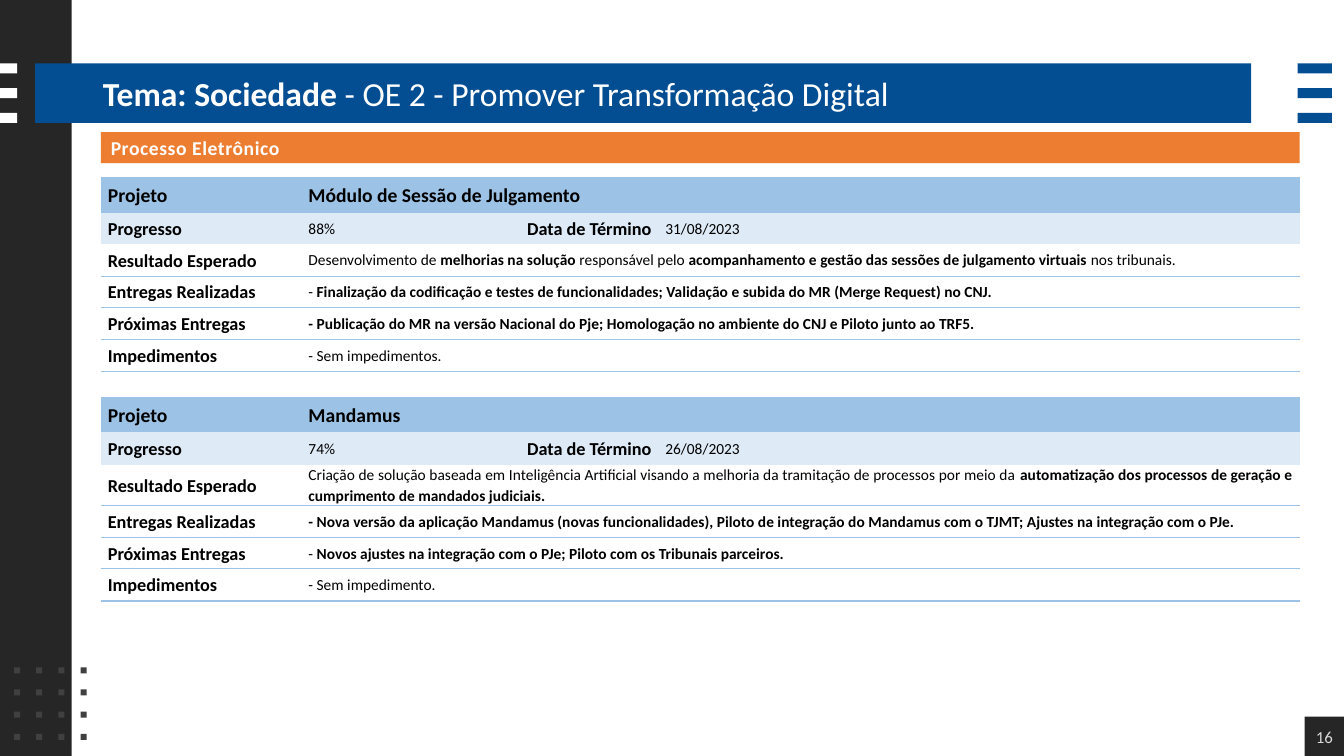
from itertools import product

from lxml import etree
from pptx import Presentation
from pptx.dml.color import RGBColor
from pptx.enum.shapes import MSO_SHAPE
from pptx.enum.text import MSO_ANCHOR, MSO_AUTO_SIZE, PP_ALIGN
from pptx.oxml.ns import qn
from pptx.util import Inches, Pt

BLUE = "034D92"
DARK = "262626"
WHITE = "FFFFFF"
BLACK = "000000"
HEADER = "9CC2E5"
PROGRESS = "DEEAF6"
NO_STYLE = "{2D5ABB26-0587-4C30-8999-92F81FD0307C}"

COLUMNS = (1.99, 1.77, 1.77, 6.36)
LABELS = ("Resultado Esperado", "Entregas Realizadas", "Próximas Entregas", "Impedimentos")

SESSION = {
    "name": "Módulo de Sessão de Julgamento",
    "progress": "88%",
    "end": "31/08/2023",
    "details": (
        "Desenvolvimento de *melhorias na solução* responsável pelo "
        "*acompanhamento e gestão das sessões de julgamento virtuais *nos tribunais.",
        "- *Finalização da codificação e testes de funcionalidades; "
        "Validação e subida do MR (Merge Request) no CNJ.",
        "*- Publicação do MR na versão Nacional do Pje; "
        "Homologação no ambiente do CNJ e Piloto junto ao TRF5.",
        "- Sem impedimentos.",
    ),
}
MANDAMUS = {
    "name": "Mandamus",
    "progress": "74%",
    "end": "26/08/2023",
    "details": (
        "Criação de solução baseada em Inteligência Artificial visando a melhoria "
        "da tramitação de processos por meio da *automatização dos processos de "
        "geração e cumprimento de mandados judiciais.",
        "*- Nova versão da aplicação Mandamus (novas funcionalidades), Piloto de "
        "integração do Mandamus com o TJMT; Ajustes na integração com o PJe.",
        "- *Novos ajustes na integração com o PJe; Piloto com os Tribunais parceiros.",
        "- Sem impedimento.",
    ),
}


def rgb(value):
    return RGBColor.from_string(value)


def apply(target, values):
    for name, value in values.items():
        setattr(target, name, value)


def write(paragraph, text, size, color, align=PP_ALIGN.LEFT):
    paragraph.alignment = align
    for index, part in enumerate(text.split("*")):
        if part:
            run = paragraph.add_run()
            run.text = part
            apply(run.font, {"name": "Calibri", "size": Pt(size), "bold": index % 2 == 1})
            run.font.color.rgb = rgb(color)


def add_block(slide, left, top, width, height, color):
    block = slide.shapes.add_shape(
        MSO_SHAPE.RECTANGLE, Inches(left), Inches(top), Inches(width), Inches(height))
    block.shadow.inherit = False
    block.fill.solid()
    block.fill.fore_color.rgb = rgb(color)
    block.line.fill.background()
    return block


def add_stripes(slide, left, width, color):
    for row in range(3):
        add_block(slide, left, 0.63 + row * 0.245, width, 0.1, color)


def add_decoration(slide):
    add_block(slide, 0, 0, 0.71, 7.5, DARK)
    add_block(slide, 0.35, 0.63, 12.06, 0.59, BLUE)
    add_stripes(slide, 0, 0.17, WHITE)
    add_stripes(slide, 12.87, 0.34, BLUE)
    for row, column in product(range(4), range(4)):
        add_block(slide, 0.14 + column * 0.22, 6.62 + row * 0.22, 0.06, 0.06, "404040")


def add_title(slide):
    title = slide.shapes.title
    apply(title, {"left": Inches(0.92), "top": Inches(0.64),
                  "width": Inches(11.5), "height": Inches(0.56)})
    apply(title.text_frame, {"vertical_anchor": MSO_ANCHOR.MIDDLE, "word_wrap": True,
                             "auto_size": MSO_AUTO_SIZE.NONE})
    write(title.text_frame.paragraphs[0],
          "*Tema: Sociedade *- OE 2 - Promover Transformação Digital", 24, WHITE)
    title.element.getparent().append(title.element)


def add_section(slide):
    section = add_block(slide, 1, 1.31, 11.89, 0.31, "ED7D31")
    section.text_frame.vertical_anchor = MSO_ANCHOR.MIDDLE
    heading = section.text_frame.paragraphs[0]
    write(heading, "*Processo Eletrônico", 14, WHITE)
    heading.runs[0]._r.get_or_add_rPr().set("spc", "40")


def add_page_number(slide):
    page = add_block(slide, 12.94, 7.11, 0.39, 0.39, DARK)
    apply(page.text_frame, {"margin_left": 0, "margin_right": 0, "margin_top": 0,
                            "margin_bottom": 0, "vertical_anchor": MSO_ANCHOR.MIDDLE})
    write(page.text_frame.paragraphs[0], "16", 12, "D9D9D9", PP_ALIGN.CENTER)


def fill_cell(cell, text, size, align=PP_ALIGN.LEFT):
    paragraph = cell.text_frame.paragraphs[0]
    write(paragraph, text, size, BLACK, align)
    paragraph.line_spacing = 1.07


def format_row(row, color):
    for cell in row.cells:
        apply(cell, {"margin_left": Inches(0.07), "margin_right": Inches(0.07),
                     "margin_top": 0, "margin_bottom": 0,
                     "vertical_anchor": MSO_ANCHOR.MIDDLE})
        if color:
            cell.fill.solid()
            cell.fill.fore_color.rgb = rgb(color)
        else:
            cell.fill.background()
            add_bottom_border(cell)


def add_bottom_border(cell):
    border = etree.Element(qn("a:lnB"), w=str(Pt(1)))
    fill = etree.SubElement(border, qn("a:solidFill"))
    etree.SubElement(fill, qn("a:srgbClr"), val=HEADER)
    cell._tc.get_or_add_tcPr().insert(0, border)


def add_project(slide, project, top, heights):
    frame = slide.shapes.add_table(
        len(heights), len(COLUMNS), Inches(1), Inches(top),
        Inches(sum(COLUMNS)), Inches(sum(heights)))
    for style in frame.element.iter(qn("a:tableStyleId")):
        style.text = NO_STYLE
    table = frame.table
    apply(table, {"first_row": False, "horz_banding": False})
    for column, width in zip(table.columns, COLUMNS):
        column.width = Inches(width)
    for index, (row, height) in enumerate(zip(table.rows, heights)):
        row.height = Inches(height)
        format_row(row, {0: HEADER, 1: PROGRESS}.get(index))
        if index != 1:
            table.cell(index, 1).merge(table.cell(index, 3))

    fill_cell(table.cell(0, 0), "*Projeto", 14)
    fill_cell(table.cell(0, 1), "*" + project["name"], 14)
    fill_cell(table.cell(1, 0), "*Progresso", 13)
    fill_cell(table.cell(1, 1), project["progress"], 11)
    fill_cell(table.cell(1, 2), "*Data de Término", 13, PP_ALIGN.RIGHT)
    fill_cell(table.cell(1, 3), project["end"], 11)
    for index, (label, detail) in enumerate(zip(LABELS, project["details"]), start=2):
        fill_cell(table.cell(index, 0), "*" + label, 13)
        fill_cell(table.cell(index, 1), detail, 11, PP_ALIGN.JUSTIFY)


def main():
    presentation = Presentation()
    apply(presentation, {"slide_width": Inches(13.33), "slide_height": Inches(7.5)})
    slide = presentation.slides.add_slide(presentation.slide_layouts[5])
    add_decoration(slide)
    add_page_number(slide)
    add_section(slide)
    add_title(slide)
    add_project(slide, MANDAMUS, 3.94, (0.35, 0.32, 0.4, 0.32, 0.31, 0.32))
    add_project(slide, SESSION, 1.76, (0.35, 0.31, 0.32, 0.31, 0.32, 0.32))
    presentation.save("out.pptx")


if __name__ == "__main__":
    main()
